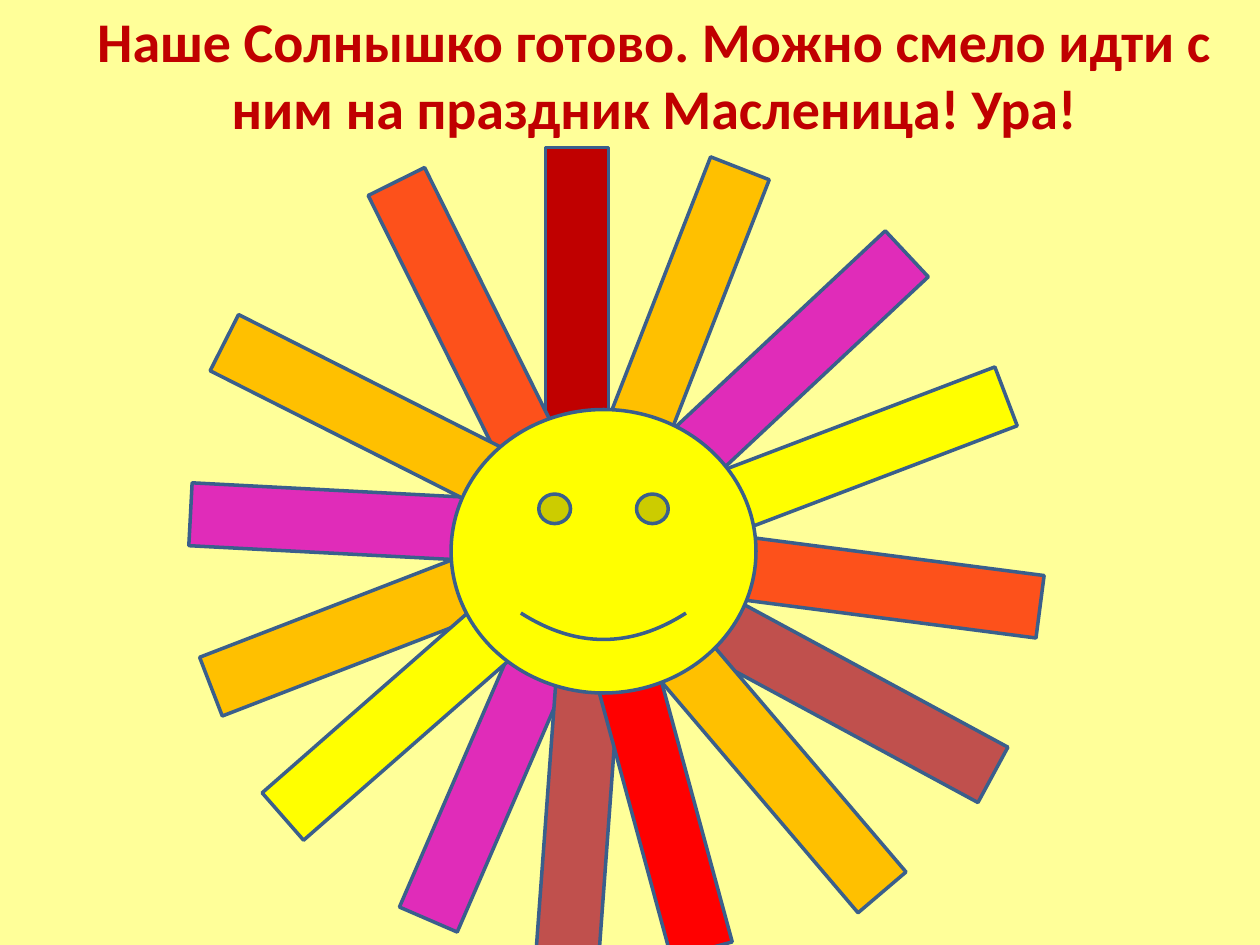
from dataclasses import dataclass

from pptx import Presentation
from pptx.dml.color import RGBColor as RGB
from pptx.enum.shapes import MSO_SHAPE as Shape
from pptx.enum.text import MSO_ANCHOR as Anchor, MSO_AUTO_SIZE as AutoSize, PP_ALIGN as Align
from pptx.util import Inches, Pt


@dataclass(frozen=True)
class Theme:
    background: RGB = RGB.from_string("FFFF99")
    outline: RGB = RGB.from_string("3A5F8C")
    crimson: RGB = RGB.from_string("C00000")
    magenta: RGB = RGB.from_string("E02CB9")
    yellow: RGB = RGB.from_string("FFFF00")
    brick: RGB = RGB.from_string("C0504D")
    orange: RGB = RGB.from_string("FD511B")
    amber: RGB = RGB.from_string("FFC000")
    red: RGB = RGB.from_string("FF0000")
    font: str = "Calibri"
    title_size: Pt = Pt(32)
    line_width: Pt = Pt(2)


@dataclass(frozen=True)
class Ray:
    left: float
    top: float
    length: float
    angle: float
    color: RGB


THEME = Theme()
RAY_WIDTH = 0.5
TITLE = "Наше Солнышко готово. Можно смело идти с ним на праздник Масленица! Ура!"

# Back to front: neighbouring rays overlap near the face
RAYS = [
    Ray(4.33, 1.17, 2.2, 0, THEME.crimson),
    Ray(3.59, 5.17, 2.22, 23.4, THEME.magenta),
    Ray(6.58, 2.35, 2.47, 69.2, THEME.yellow),
    Ray(6.54, 4.32, 2.48, 298.4, THEME.brick),
    Ray(6.77, 3.41, 2.49, 277.4, THEME.orange),
    Ray(3.41, 1.32, 2.31, 333.6, THEME.orange),
    Ray(2.46, 3.94, 2.22, 68.9, THEME.amber),
    Ray(2.83, 4.64, 2.22, 48.8, THEME.yellow),
    Ray(5.97, 4.96, 2.41, 319.6, THEME.amber),
    Ray(4.33, 5.43, 2.22, 4.2, THEME.brick),
    Ray(5.03, 5.36, 2.22, 344.8, THEME.red),
    Ray(2.37, 3.03, 2.22, 93, THEME.magenta),
    Ray(5.22, 1.26, 2.22, 21.3, THEME.amber),
    Ray(6.06, 1.63, 2.43, 46.9, THEME.magenta),
    Ray(2.57, 2.08, 2.33, 116.8, THEME.amber),
]


def add_outlined(slide, kind: Shape, left: float, top: float, width: float,
                 height: float, color: RGB, angle: float = 0) -> None:
    sp = slide.shapes.add_shape(kind, Inches(left), Inches(top), Inches(width), Inches(height))
    sp.rotation = angle
    sp.shadow.inherit = False
    sp.fill.solid()
    sp.fill.fore_color.rgb = color
    sp.line.color.rgb = THEME.outline
    sp.line.width = THEME.line_width


def set_title(slide) -> None:
    sp = slide.shapes.title
    sp.left, sp.top, sp.width, sp.height = map(Inches, (0.17, 0, 9.67, 1.08))
    tf = sp.text_frame
    tf.text = TITLE
    tf.word_wrap = True
    tf.auto_size = AutoSize.NONE
    tf.vertical_anchor = Anchor.TOP
    tf.margin_left = Inches(0.48)
    p = tf.paragraphs[0]
    p.alignment = Align.CENTER
    font = p.runs[0].font
    font.name = THEME.font
    font.size = THEME.title_size
    font.bold = True
    font.color.rgb = THEME.crimson


def draw_sun(slide) -> None:
    add_outlined(slide, Shape.OVAL, 3.58, 3.25, 2.33, 2.33, THEME.yellow)
    for ray in RAYS:
        add_outlined(slide, Shape.RECTANGLE, ray.left, ray.top, RAY_WIDTH,
                     ray.length, ray.color, ray.angle)
    add_outlined(slide, Shape.SMILEY_FACE, 3.58, 3.25, 2.42, 2.25, THEME.yellow)


def main() -> None:
    prs = Presentation()
    prs.slide_width, prs.slide_height = Inches(10), Inches(7.5)
    slide = prs.slides.add_slide(prs.slide_layouts.get_by_name("Title Only"))
    slide.background.fill.solid()
    slide.background.fill.fore_color.rgb = THEME.background
    set_title(slide)
    draw_sun(slide)
    prs.save("out.pptx")


if __name__ == "__main__":
    main()
